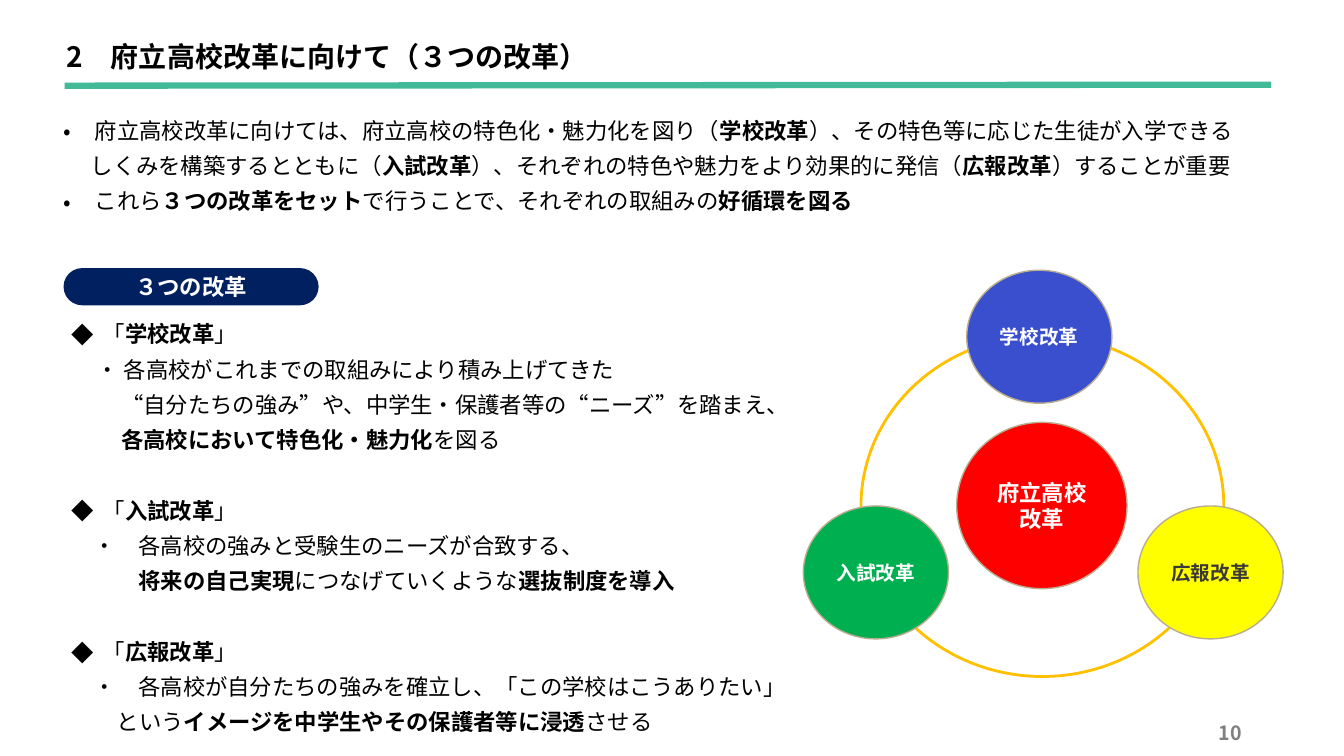
"""Build a slide on the three reforms of prefectural high schools."""
from lxml.etree import SubElement
from pptx import Presentation
from pptx.dml.color import RGBColor
from pptx.enum.shapes import MSO_CONNECTOR, MSO_SHAPE
from pptx.enum.text import MSO_ANCHOR, PP_ALIGN
from pptx.oxml.ns import qn
from pptx.util import Pt

FONT = "Noto Sans CJK JP"
BLACK = RGBColor(0, 0, 0)
WHITE = RGBColor(255, 255, 255)
DARK = RGBColor(0x3B, 0x38, 0x38)
GRAY = RGBColor(0x80, 0x80, 0x80)
NAVY = RGBColor(0x00, 0x20, 0x60)
RED = RGBColor(0xFF, 0x00, 0x00)
BLUE = RGBColor(0x39, 0x4F, 0xCD)
GREEN = RGBColor(0x00, 0xB0, 0x50)
YELLOW = RGBColor(0xFF, 0xFF, 0x00)
GOLD = RGBColor(0xFF, 0xC0, 0x00)
TAN = RGBColor(0xBA, 0xAC, 0x8E)
TEAL = RGBColor(0x42, 0xBA, 0x97)

HANG = 22.4
LINE = 1.2
GAP = 6
BLANK = 16 * LINE + GAP

TITLE = "*2　府立高校改革に向けて（３つの改革）*"
PAGE = "*10*"
LABEL = "*３つの改革*"

# (bullet, left indent, space before, text); asterisks enclose bold words
INTRO = [
    ("•", HANG, 0, "府立高校改革に向けては、府立高校の特色化・魅力化を図り（*学校改革*）、その特色等に応じた生徒が入学できる"),
    ("", 19.6, 0, "しくみを構築するとともに（*入試改革*）、それぞれの特色や魅力をより効果的に発信（*広報改革*）することが重要"),
    ("•", HANG, 0, "これら*３つの改革をセット*で行うことで、それぞれの取組みの*好循環を図る*"),
]
BODY = [
    ("◆", HANG, 0, "「*学校改革*」"),
    ("", 18, 0, "・ 各高校がこれまでの取組みにより積み上げてきた"),
    ("", 35.6, 0, "“自分たちの強み”や、中学生・保護者等の“ニーズ”を踏まえ、"),
    ("", 35.6, 0, "*各高校において特色化・魅力化*を図る"),
    ("◆", HANG, BLANK, "「*入試改革*」"),
    ("", 16, 0, "・　各高校の強みと受験生のニーズが合致する、"),
    ("", 48, 0, "*将来の自己実現*につなげていくような*選抜制度を導入*"),
    ("◆", HANG, BLANK, "「*広報改革*」"),
    ("", 16, 0, "・　各高校が自分たちの強みを確立し、「この学校はこうありたい」"),
    ("", 32.4, 0, "という*イメージを中学生やその保護者等に浸透*させる"),
]
# (centre x, centre y, width, height, fill, text colour, size, lines)
DISCS = [
    (744.2, 361.1, 121.7, 118.8, RED, WHITE, 16, ["*府立高校*", "*改革*"]),
    (742.4, 240.5, 103.7, 95, BLUE, WHITE, 14, ["*学校改革*"]),
    (625.7, 408.9, 103.7, 95, GREEN, WHITE, 14, ["*入試改革*"]),
    (864.7, 408.9, 103.7, 95, YELLOW, DARK, 14, ["*広報改革*"]),
]


def write(frame, rows, size, color, align=PP_ALIGN.LEFT, gap=0, step=LINE):
    """Fill a text frame with rows of plain and bold runs."""
    frame.word_wrap = True
    for i, (mark, left, before, text) in enumerate(rows):
        para = frame.paragraphs[0] if i == 0 else frame.add_paragraph()
        para.alignment = align
        para.line_spacing = Pt(size * step)
        para.space_before, para.space_after = Pt(before), Pt(gap)
        props = para._p.get_or_add_pPr()
        props.set("marL", str(int(Pt(left))))
        props.set("indent", str(-int(Pt(left)) if mark else 0))
        if mark:
            SubElement(props, qn("a:buFont")).set("typeface", FONT)
            SubElement(props, qn("a:buChar")).set("char", mark)
        for j, part in enumerate(text.split("*")):
            if part:
                run = para.add_run()
                run.text = part
                font = run.font
                font.size, font.bold, font.name = Pt(size), j % 2 == 1, FONT
                font.color.rgb = color
                SubElement(font._element, qn("a:ea")).set("typeface", FONT)


def plain(lines):
    """Turn lines into rows without bullet or indent."""
    return [("", 0, 0, line) for line in lines]


def add_box(slide, x, y, w, h, inset):
    """Add a text box and return its frame."""
    frame = slide.shapes.add_textbox(Pt(x), Pt(y), Pt(w), Pt(h)).text_frame
    frame.margin_left = frame.margin_right = Pt(7.2)
    frame.margin_top = frame.margin_bottom = Pt(inset)
    return frame


def add_form(slide, kind, x, y, w, h, fill=None, line=None, width=1):
    """Add a flat preset shape."""
    form = slide.shapes.add_shape(kind, Pt(x), Pt(y), Pt(w), Pt(h))
    form.shadow.inherit = False
    if fill is None:
        form.fill.background()
    else:
        form.fill.solid()
        form.fill.fore_color.rgb = fill
    if line is None:
        form.line.fill.background()
    else:
        form.line.color.rgb = line
        form.line.width = Pt(width)
    frame = form.text_frame
    frame.vertical_anchor = MSO_ANCHOR.MIDDLE
    frame.margin_left = frame.margin_right = 0
    frame.margin_top = frame.margin_bottom = 0
    return form


def main():
    """Lay out the slide and save it."""
    deck = Presentation()
    deck.slide_width, deck.slide_height = Pt(960), Pt(540)
    slide = deck.slides.add_slide(deck.slide_layouts[6])

    add_form(slide, MSO_SHAPE.OVAL, 615, 239.8, 259.2, 243.4, None, GOLD, 2)
    write(add_box(slide, 43.9, 225.4, 646.6, 306.7, 3.6), BODY, 16, BLACK, gap=GAP)

    pill = add_form(slide, MSO_SHAPE.ROUNDED_RECTANGLE, 45.4, 191.5, 182.2, 26.6, NAVY)
    pill.adjustments[0] = 0.5
    write(pill.text_frame, plain([LABEL]), 16, WHITE, PP_ALIGN.CENTER)

    for x, y, w, h, fill, ink, size, lines in DISCS:
        disc = add_form(slide, MSO_SHAPE.OVAL, x - w / 2, y - h / 2, w, h, fill, TAN)
        write(disc.text_frame, plain(lines), size, ink, PP_ALIGN.CENTER)

    write(add_box(slide, 38.2, 76.3, 869.8, 93.6, 7.2), INTRO, 16, BLACK, gap=GAP)
    write(add_box(slide, 40.3, 18.7, 663.8, 33.8, 7.2), plain([TITLE]), 20, BLACK, step=1.3)

    rule = slide.shapes.add_connector(
        MSO_CONNECTOR.STRAIGHT, Pt(46.1), Pt(61.2), Pt(907.9), Pt(60.5))
    rule.line.color.rgb = TEAL
    rule.line.width = Pt(4.5)
    SubElement(rule._element.spPr, qn("a:effectLst"))

    write(add_box(slide, 678.2, 511.2, 216, 28.8, 3.6), plain([PAGE]), 14, GRAY, PP_ALIGN.RIGHT)
    deck.save("out.pptx")


if __name__ == "__main__":
    main()
